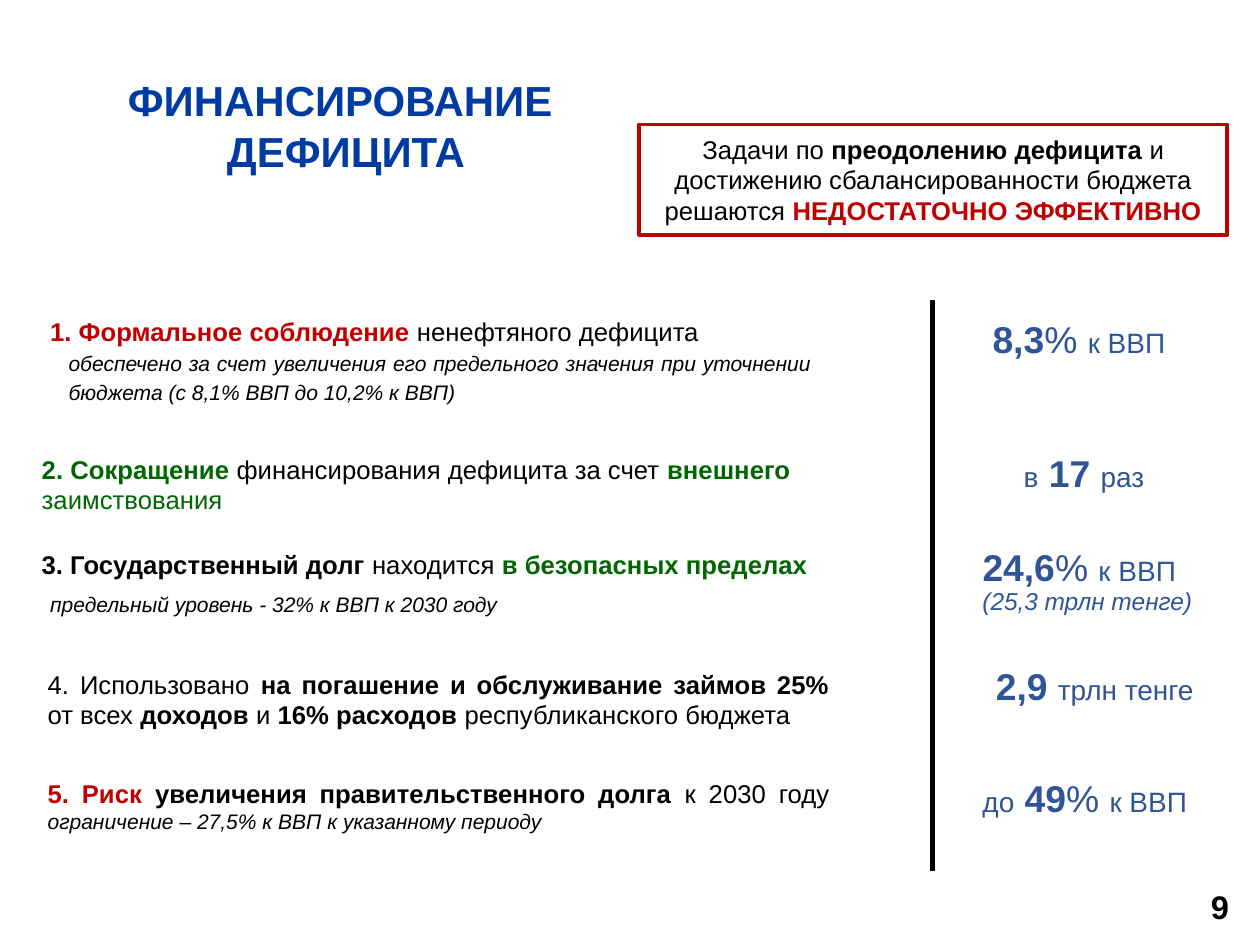
import pptx
import pptx.util
import pptx.dml.color
import pptx.enum.shapes
import pptx.enum.text
import pptx.oxml.ns
import lxml.etree

CELL = 0.1  # inches per grid column and row
COLUMNS, ROWS = 75, 56.25
ALIGN = pptx.enum.text.PP_ALIGN

THEME = {
    "font": "Arial",
    "colors": {"black": "000000", "white": "FFFFFF", "navy": "003BA3",
               "blue": "2F5597", "red": "C00000", "green": "006600"},
    "sizes": {"title": 18, "figure": 16, "number": 14, "unit": 12,
              "lead": 11, "aside": 10.5, "note": 9},
    "rule": 2.25,
    "frame": 1.5,
}

# Each entry: left, top, width, height in cells within its region, paragraph format, spans
JUSTIFIED = {"alignment": ALIGN.JUSTIFY}
NOTE = {"alignment": ALIGN.JUSTIFY, "line_spacing": 1.15}
STATEMENTS = [
    ((0.5, 0, 52.1, 2.9), {}, [
        ("1. Формальное соблюдение ", "lead red bold"),
        ("ненефтяного дефицита", "lead")]),
    ((1.6, 1.85, 46.1, 4.3), NOTE, [
        ("обеспечено за счет увеличения его предельного значения при уточнении "
         "бюджета (с 8,1% ВВП до 10,2% к ВВП)", "note italic")]),
    ((0, 8.2, 47.1, 4.7), {}, [
        ("2. Сокращение", "lead green bold"),
        (" финансирования дефицита за счет ", "lead"),
        ("внешнего ", "lead green bold"),
        ("заимствования", "lead green")]),
    ((0, 13.9, 47.7, 2.9), {}, [
        ("3. Государственный долг ", "lead bold"),
        ("находится ", "lead"),
        ("в безопасных пределах", "lead green bold")]),
    ((0.5, 16.2, 38, 2.6), NOTE, [
        ("предельный уровень - 32% к ВВП к 2030 году ", "note italic")]),
    ((0.35, 21, 48.5, 4.7), JUSTIFIED, [
        ("4. Использовано ", "lead"),
        ("на погашение и обслуживание займов 25%", "lead bold"),
        (" от всех ", "lead"),
        ("доходов ", "lead bold"),
        ("и ", "lead"),
        ("16% расходов ", "lead bold"),
        ("республиканского бюджета ", "lead")]),
    ((0.35, 27.5, 48.5, 4.4), JUSTIFIED, [
        ("5. Риск", "lead red bold"),
        (" увеличения правительственного долга ", "lead bold"),
        ("к 2030 году ", "lead"),
        ("ограничение – 27,5% к ВВП к указанному периоду", "note italic")]),
]

FIGURES = [
    ((2.6, 0.5, 15.3, 3.7), {}, [
        ("8,3", "figure blue bold"), ("% ", "figure blue"), ("к ВВП", "unit blue")]),
    ((4.45, 8.45, 12.1, 3.7), {}, [
        ("в", "unit blue"), (" ", "figure blue"),
        ("17 ", "figure blue bold"), ("раз", "unit blue")]),
    ((2, 14.05, 15.9, 3.7), {}, [
        ("24,6", "figure blue bold"), ("% ", "figure blue"), ("к ВВП", "unit blue")]),
    ((2, 16.55, 15, 2.8), {}, [("(25,3 трлн тенге)", "aside blue italic")]),
    ((0.4, 21.15, 16.6, 3.7), {"alignment": ALIGN.RIGHT}, [
        ("2,9 ", "figure blue bold"), ("трлн тенге ", "unit blue")]),
    ((2, 27.8, 14.6, 3.7), {}, [
        ("до", "unit blue"), (" ", "figure"), ("49", "figure blue bold"),
        ("% ", "figure blue"), ("к ВВП", "unit blue")]),
]


def cells(*counts):
    return [pptx.util.Inches(count * CELL) for count in counts]


def within(region, part):
    """Move a part, given relative to its region, to its place on the page."""
    return region[0] + part[0], region[1] + part[1], part[2], part[3]


def color(name):
    return pptx.dml.color.RGBColor.from_string(THEME["colors"][name])


def apply(target, formats):
    for name, value in formats.items():
        setattr(target, name, value)


def write(frame, spans, paragraph_format):
    """Fill a text frame with one paragraph; a span of "\\n" breaks the line."""
    frame.word_wrap = True
    para = frame.paragraphs[0]
    apply(para, paragraph_format)
    for text, style in spans:
        if text == "\n":
            para.add_line_break()
            continue
        span = para.add_run()
        span.text = text
        words = style.split()
        apply(span.font, {
            "name": THEME["font"],
            "size": pptx.util.Pt(THEME["sizes"][words[0]]),
            "bold": "bold" in words,
            "italic": "italic" in words,
        })
        hue = next((word for word in words if word in THEME["colors"]), "black")
        span.font.color.rgb = color(hue)


def add_text(page, box, spans, paragraph_format):
    label = page.shapes.add_textbox(*cells(*box))
    write(label.text_frame, spans, paragraph_format)
    return label


def draw_title(page, box):
    title = add_text(page, box, [("ФИНАНСИРОВАНИЕ ", "title navy bold"), ("\n", ""),
                                 ("ДЕФИЦИТА", "title navy bold")],
                     {"alignment": ALIGN.CENTER})
    sides = ("margin_left", "margin_top", "margin_right", "margin_bottom")
    apply(title.text_frame, dict.fromkeys(sides, pptx.util.Inches(0.07)))


def draw_verdict(page, box):
    verdict = page.shapes.add_shape(
        pptx.enum.shapes.MSO_SHAPE.RECTANGLE, *cells(*box))
    verdict.shadow.inherit = False
    verdict.fill.solid()
    verdict.fill.fore_color.rgb = color("white")
    verdict.line.color.rgb = color("red")
    verdict.line.width = pptx.util.Pt(THEME["frame"])
    write(verdict.text_frame, [
        ("Задачи по ", "lead"),
        ("преодолению дефицита ", "lead bold"),
        ("и достижению сбалансированности бюджета решаются ", "lead"),
        ("НЕДОСТАТОЧНО ЭФФЕКТИВНО", "lead red bold"),
    ], {"alignment": ALIGN.CENTER})


def draw_entries(page, box, entries):
    for part, paragraph_format, spans in entries:
        add_text(page, within(box, part), spans, paragraph_format)


def draw_figures(page, box):
    """Draw the column of figures with the rule along its left edge."""
    left, top, _, height = box
    rule = page.shapes.add_connector(
        pptx.enum.shapes.MSO_CONNECTOR.STRAIGHT,
        *cells(left, top, left, top + height))
    rule.line.color.rgb = color("black")
    rule.line.width = pptx.util.Pt(THEME["rule"])
    properties = rule._element.spPr
    lxml.etree.SubElement(properties, pptx.oxml.ns.qn("a:effectLst"))
    draw_entries(page, box, FIGURES)


def main():
    deck = pptx.Presentation()
    deck.slide_width, deck.slide_height = cells(COLUMNS, ROWS)
    page = deck.slides.add_slide(deck.slide_layouts[6])
    draw_title(page, (3.15, 3.75, 34.9, 8.3))
    draw_verdict(page, (38.05, 7.4, 35, 6.6))
    draw_entries(page, (1.5, 18.3, 49, 32), STATEMENTS)
    draw_figures(page, (55.5, 17.85, 18, 34))
    add_text(page, (71.1, 52.3, 2.8, 3.4), [("9", "number bold")], {})
    deck.save("out.pptx")


if __name__ == "__main__":
    main()
